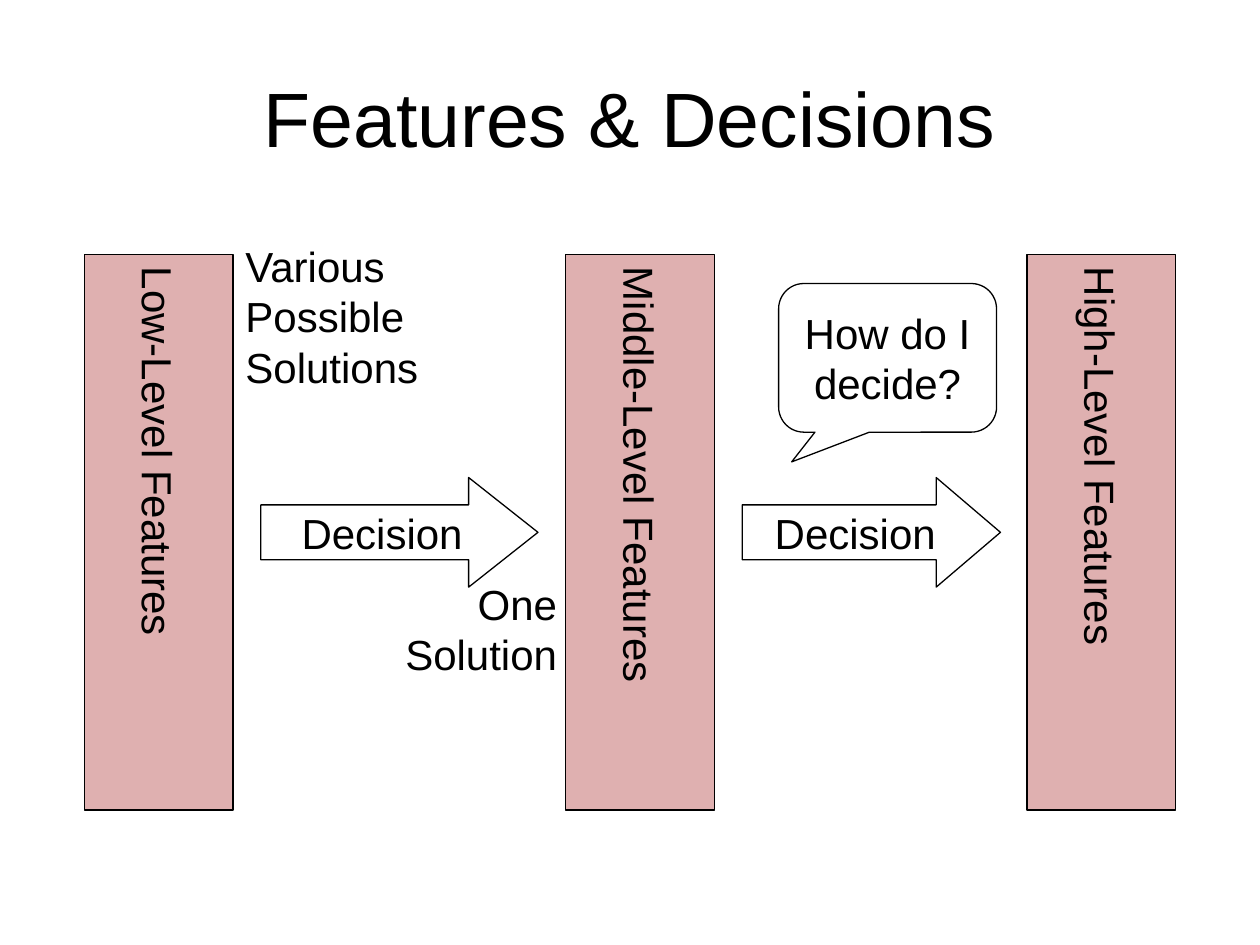
from pptx import Presentation
from pptx.dml.color import RGBColor
from pptx.enum.shapes import MSO_SHAPE
from pptx.enum.text import MSO_ANCHOR, PP_ALIGN
from pptx.oxml.ns import qn
from pptx.util import Inches, Pt
from lxml.etree import SubElement

BLACK = RGBColor(0x00, 0x00, 0x00)
DARK_RED = RGBColor(0x99, 0x00, 0x00)
FONT = "Arial"

# Content: positions in inches
TITLE = "Features & Decisions"
LEVELS = [("Low-Level Features", 0.67), ("Middle-Level Features", 4.49),
          ("High-Level Features", 8.15)]
BAR_TOP, BAR_WIDTH, BAR_HEIGHT, BAR_ALPHA = 2.02, 1.18, 4.41, 31
DECISIONS = [("Decision", 2.07, 2.2), ("Decision", 5.89, 2.05)]  # text, left, width
ARROW_TOP, ARROW_HEIGHT, ARROW_HEAD = 3.79, 0.87, 0.55
NOTES = [("Various\nPossible\nSolutions", (1.85, 1.86, 1.57, 1.3), PP_ALIGN.LEFT),
         ("One\nSolution", (3.11, 4.54, 1.41, 0.9), PP_ALIGN.RIGHT)]
QUESTION = ("How do I decide?", (6.18, 2.25, 1.73, 1.18))


def set_text(sp, text, size=24, align=PP_ALIGN.CENTER, anchor=MSO_ANCHOR.MIDDLE,
             wrap=False, vert=None):
    tf = sp.text_frame
    tf.word_wrap = wrap
    tf.vertical_anchor = anchor
    if vert:
        tf._txBody.bodyPr.set("vert", vert)
    p = tf.paragraphs[0]
    p.text = text.replace("\n", "\v")
    p.alignment = align
    for r in p.runs:
        r.font.name = FONT
        r.font.size = Pt(size)
        r.font.color.rgb = BLACK


def add_outlined(s, kind, box, adjustments=()):
    sp = s.shapes.add_shape(kind, *map(Inches, box))
    sp.shadow.inherit = False
    sp.fill.background()
    sp.line.color.rgb = BLACK
    sp.line.width = Pt(0.75)
    for i, value in enumerate(adjustments):
        sp.adjustments[i] = value
    return sp


def fill_translucent(sp, color, percent):
    sp.fill.solid()
    sp.fill.fore_color.rgb = color
    clr = sp._element.spPr.find(qn("a:solidFill")).find(qn("a:srgbClr"))
    SubElement(clr, qn("a:alpha")).set("val", str(percent * 1000))


prs = Presentation()
prs.slide_width, prs.slide_height = Inches(10), Inches(7.5)
s = prs.slides.add_slide(prs.slide_layouts[5])

# Title
title = s.shapes.title
title.left, title.top, title.width, title.height = map(Inches, (0.5, 0.3, 9, 1.25))
set_text(title, TITLE, size=44, wrap=True)

# Feature level bars
for text, left in LEVELS:
    bar = add_outlined(s, MSO_SHAPE.RECTANGLE, (left, BAR_TOP, BAR_WIDTH, BAR_HEIGHT))
    fill_translucent(bar, DARK_RED, BAR_ALPHA)
    set_text(bar, text, vert="eaVert")

# Decision arrows between the bars
for text, left, width in DECISIONS:
    head = (ARROW_HEAD if width > 2.1 else 0.51) / ARROW_HEIGHT
    arrow = add_outlined(s, MSO_SHAPE.RIGHT_ARROW,
                         (left, ARROW_TOP, width, ARROW_HEIGHT), (0.5, head))
    set_text(arrow, text)

# Notes at either end of the first decision
for text, box, align in NOTES:
    note = s.shapes.add_textbox(*map(Inches, box))
    set_text(note, text, align=align, anchor=MSO_ANCHOR.TOP)

# Question callout
text, box = QUESTION
callout = add_outlined(s, MSO_SHAPE.ROUNDED_RECTANGULAR_CALLOUT, box, (-0.44, 0.7, 0.17))
set_text(callout, text, wrap=True)

prs.save("out.pptx")
